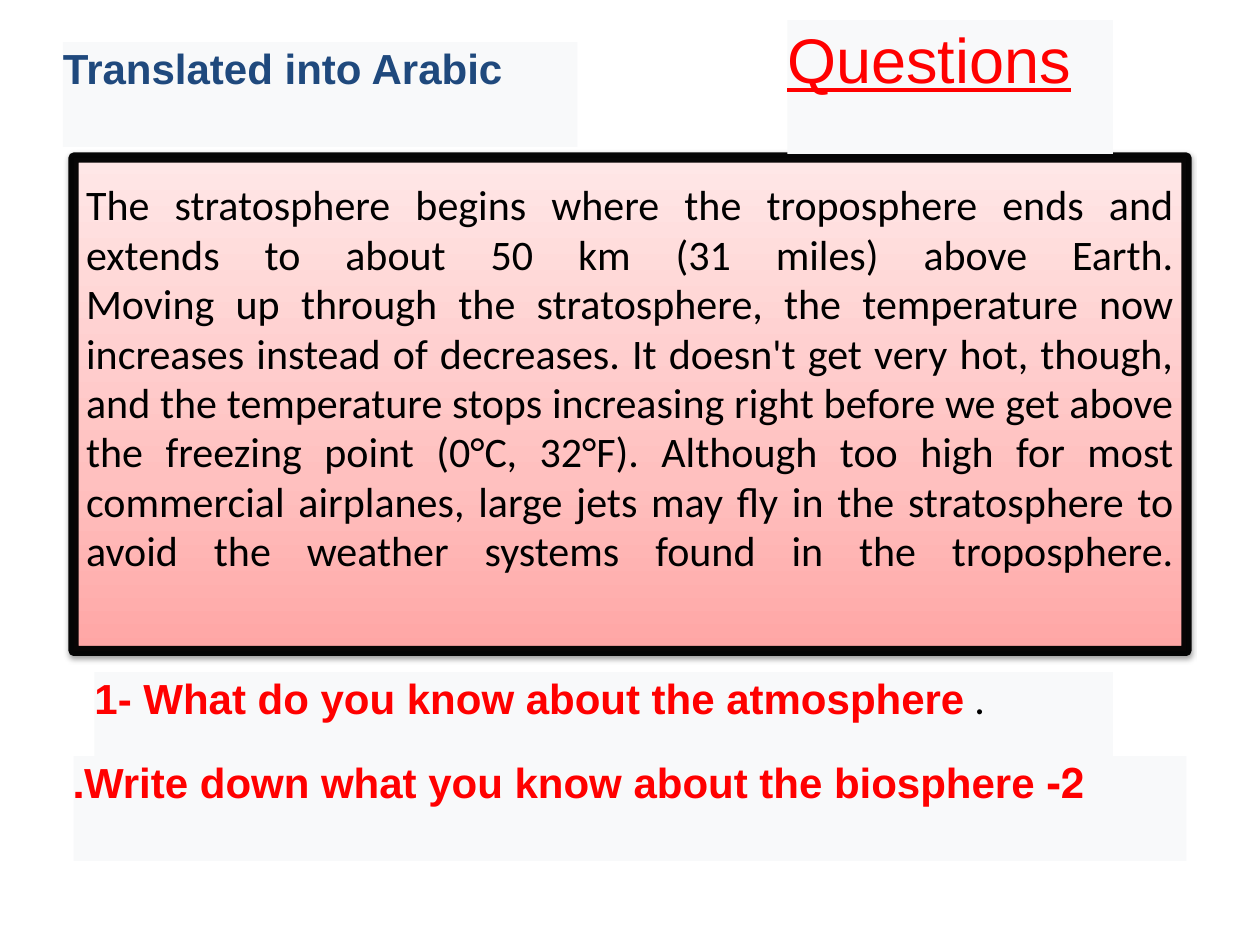
from pptx import Presentation
from pptx.dml.color import RGBColor
from pptx.enum.shapes import MSO_SHAPE
from pptx.enum.text import MSO_ANCHOR, MSO_AUTO_SIZE, PP_ALIGN
from pptx.oxml import parse_xml
from pptx.oxml.ns import nsdecls
from pptx.util import Pt


def color(hex_value):
    return RGBColor.from_string(hex_value)


def place(shape, left, top, width, height):
    shape.left, shape.top = Pt(left), Pt(top)
    shape.width, shape.height = Pt(width), Pt(height)


deck = Presentation()
deck.slide_width, deck.slide_height = Pt(720), Pt(540)
page = deck.slides.add_slide(deck.slide_layouts[0])
subtitle = page.placeholders[1].element
subtitle.getparent().remove(subtitle)

# Reading passage
passage = page.shapes.title
place(passage, 42, 90, 636, 282)
frame = passage.text_frame
frame.word_wrap = True
frame.auto_size = MSO_AUTO_SIZE.NONE
frame.vertical_anchor = MSO_ANCHOR.MIDDLE
para = frame.paragraphs[0]
para.text = (
    "The stratosphere begins where the troposphere ends and extends to about "
    "50 km (31 miles) above Earth.\v"
    "Moving up through the stratosphere, the temperature now increases instead "
    "of decreases. It doesn't get very hot, though, and the temperature stops "
    "increasing right before we get above the freezing point (0°C, 32°F). "
    "Although too high for most commercial airplanes, large jets may fly in the "
    "stratosphere to avoid the weather systems found in the troposphere.\v"
)
para.alignment = PP_ALIGN.JUSTIFY
para.line_spacing = 0.98
para.font.size = Pt(24)
para.font.name = "Calibri"
para.font.color.rgb = color("000000")

# Gradient fill, translucent round-joined border and soft shadow
stops = "".join(
    f'<a:gs pos="{position * 1000}"><a:srgbClr val="{stop}"/></a:gs>'
    for position, stop in [(0, "FFA6A5"), (35, "FFC0BF"), (100, "FFE7E7")]
)
namespace = nsdecls("a")
for xml in (
    f'<a:gradFill {namespace} rotWithShape="1"><a:gsLst>{stops}</a:gsLst>'
    '<a:lin ang="16200000" scaled="1"/></a:gradFill>',
    f'<a:ln {namespace} w="{Pt(5.75)}"><a:solidFill><a:srgbClr val="000000">'
    '<a:alpha val="96000"/></a:srgbClr></a:solidFill><a:round/></a:ln>',
    f'<a:effectLst {namespace}><a:outerShdw blurRad="{Pt(3.1)}" dist="{Pt(1.6)}" '
    'dir="5400000" rotWithShape="0"><a:srgbClr val="000000">'
    '<a:alpha val="38000"/></a:srgbClr></a:outerShdw></a:effectLst>',
):
    passage.element.spPr.append(parse_xml(xml))

# Pale panels: bounds, text, size, colour, bold, underline, right-to-left
panels = [
    ((54, 384, 582, 60), "1- What do you know about the atmosphere",
     24, "FF0000", True, False, False),
    ((36, 24, 294, 60), "Translated into Arabic", 24, "1F497D", True, False, True),
    ((42, 432, 636, 60), "2- Write down what you know about the biosphere.",
     24, "FF0000", True, False, True),
    ((450, 11.5, 186, 76.5), "Questions", 36, "FF0000", False, True, True),
]
for bounds, text, size, ink, bold, underline, right_to_left in panels:
    panel = page.shapes.add_shape(MSO_SHAPE.RECTANGLE, 0, 0, 0, 0)
    place(panel, *bounds)
    panel.shadow.inherit = False
    panel.fill.solid()
    panel.fill.fore_color.rgb = color("F8F9FA")
    panel.line.fill.background()
    frame = panel.text_frame
    frame.word_wrap = True
    frame.vertical_anchor = MSO_ANCHOR.TOP
    frame.margin_left = frame.margin_right = 0
    frame.margin_top = frame.margin_bottom = 0
    para = frame.paragraphs[0]
    para.alignment = PP_ALIGN.LEFT
    if right_to_left:
        para._p.get_or_add_pPr().set("rtl", "1")
    span = para.add_run()
    span.text = text
    span.font.name = "Arial"
    span.font.size = Pt(size)
    span.font.bold = bold
    span.font.underline = underline
    span.font.color.rgb = color(ink)
    if not right_to_left:
        period = para.add_run()
        period.text = " ."
        period.font.name = "Calibri"
        period.font.size = Pt(size)
        period.font.color.rgb = color("000000")

deck.save("out.pptx")
